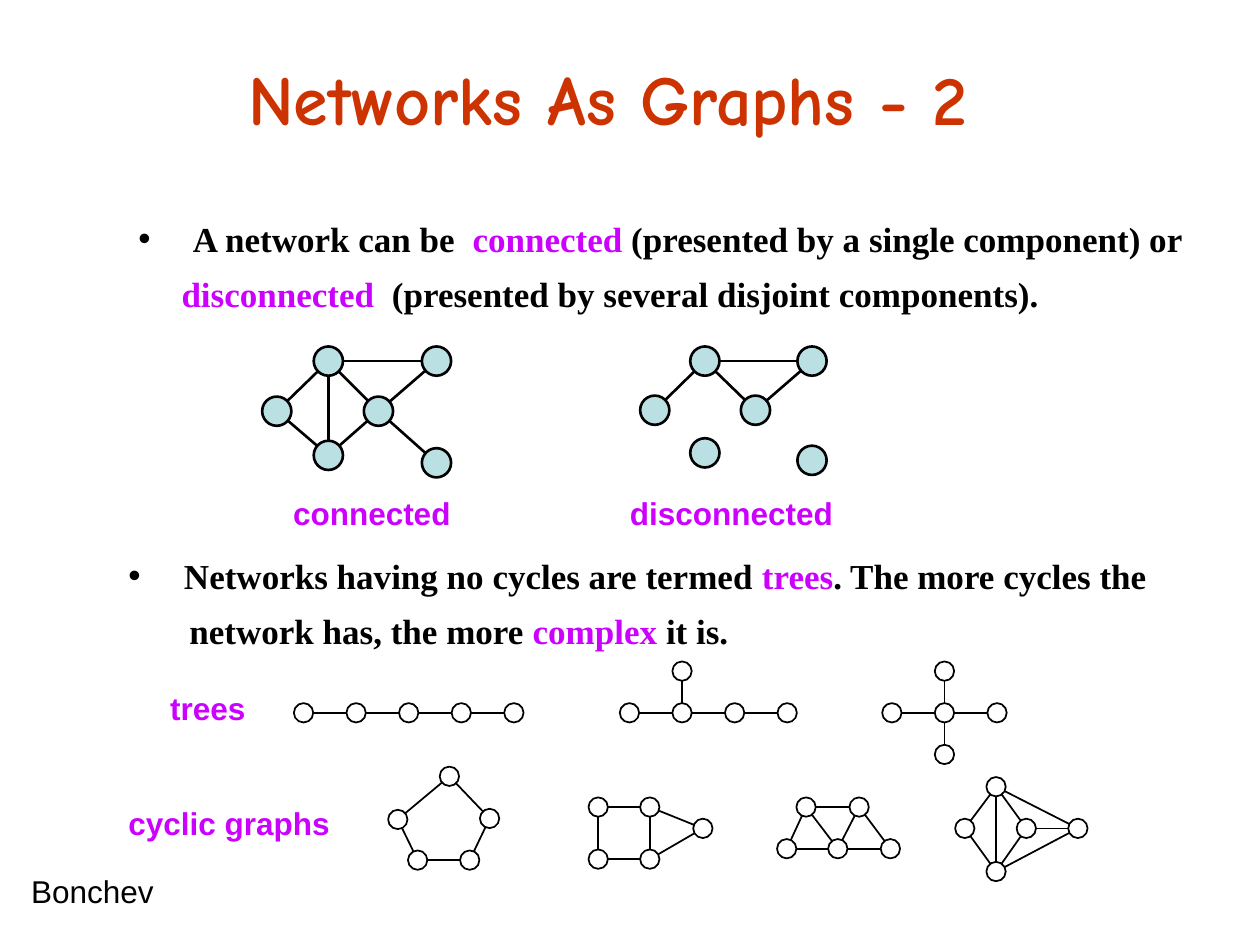
from itertools import pairwise
from math import hypot

from lxml import etree
from pptx import Presentation
from pptx.dml.color import RGBColor
from pptx.enum.shapes import MSO_CONNECTOR, MSO_SHAPE
from pptx.enum.text import MSO_ANCHOR, PP_ALIGN
from pptx.oxml.ns import qn
from pptx.util import Cm, Pt

STRAIGHT = MSO_CONNECTOR.STRAIGHT
ELLIPSE = MSO_SHAPE.OVAL
MIDDLE, TOP = MSO_ANCHOR.MIDDLE, MSO_ANCHOR.TOP
CENTER, LEFT = PP_ALIGN.CENTER, PP_ALIGN.LEFT

BLACK = RGBColor(0x00, 0x00, 0x00)
WHITE = RGBColor(0xFF, 0xFF, 0xFF)
RUST = RGBColor(0xCC, 0x33, 0x00)
VIOLET = RGBColor(0xCC, 0x00, 0xFF)
PALE_TEAL = RGBColor(0xBB, 0xE0, 0xE3)

BIG_NODE = dict(diameter=0.59, fill=PALE_TEAL, weight=1.5)


def add_text(paragraph, text, font="Arial", size=18, color=BLACK, bold=False):
    run = paragraph.add_run()
    run.text = text
    run.font.name = font
    run.font.size = Pt(size)
    run.font.color.rgb = color
    run.font.bold = bold


class GraphSlide:
    def __init__(self, slide):
        self.slide = slide

    def text_frame(self, left, top, width, height, wrap=False, anchor=TOP):
        box = self.slide.shapes.add_textbox(Cm(left), Cm(top), Cm(width), Cm(height))
        box.text_frame.word_wrap = wrap
        box.text_frame.vertical_anchor = anchor
        return box.text_frame

    def label(self, text, left, top, width, height=1.02, align=LEFT, anchor=TOP, **style):
        frame = self.text_frame(left, top, width, height, anchor=anchor)
        frame.paragraphs[0].alignment = align
        add_text(frame.paragraphs[0], text, **style)

    def statement(self, left, top, width, lines, indents):
        frame = self.text_frame(left, top, width, 2.46, wrap=True)
        bulleted, continuation = frame.paragraphs[0], frame.add_paragraph()
        for paragraph, parts, indent in zip((bulleted, continuation), lines, indents):
            paragraph.line_spacing = 1.3
            paragraph._p.get_or_add_pPr().set("marL", str(Cm(indent)))
            for text, color in parts:
                add_text(paragraph, text, font="Times New Roman", size=20,
                         color=color, bold=True)
        properties = bulleted._p.get_or_add_pPr()
        properties.set("indent", str(-Cm(indents[0])))
        etree.SubElement(properties, qn("a:buFont")).set("typeface", "Arial")
        etree.SubElement(properties, qn("a:buChar")).set("char", "•")

    def node(self, x, y, diameter, fill, weight):
        circle = self.slide.shapes.add_shape(
            ELLIPSE, Cm(x - diameter / 2), Cm(y - diameter / 2), Cm(diameter), Cm(diameter))
        circle.shadow.inherit = False
        circle.fill.solid()
        circle.fill.fore_color.rgb = fill
        circle.line.color.rgb = BLACK
        circle.line.width = Pt(weight)

    def edge(self, start, end, diameter, weight):
        (x1, y1), (x2, y2) = start, end
        share = diameter / 2 / hypot(x2 - x1, y2 - y1)
        dx, dy = (x2 - x1) * share, (y2 - y1) * share
        line = self.slide.shapes.add_connector(
            STRAIGHT, Cm(x1 + dx), Cm(y1 + dy), Cm(x2 - dx), Cm(y2 - dy))
        line.line.color.rgb = BLACK
        line.line.width = Pt(weight)
        etree.SubElement(line._element.spPr, qn("a:effectLst"))

    def graph(self, nodes, edges, diameter=0.39, fill=WHITE, weight=1):
        for x, y in nodes.values():
            self.node(x, y, diameter, fill, weight)
        for start, end in edges:
            self.edge(nodes[start], nodes[end], diameter, weight)

    def tree(self, left, length, branches=()):
        step, rise, trunk_y = 1.06, 0.84, 14.37
        nodes = {i: (left + i * step, trunk_y) for i in range(length)}
        edges = list(pairwise(range(length)))
        for side in branches:
            nodes[side] = (left + step, trunk_y + (rise if side == "below" else -rise))
            edges.append((1, side))
        self.graph(nodes, edges)


def main():
    deck = Presentation()
    deck.slide_width, deck.slide_height = Cm(25.4), Cm(19.05)
    page = GraphSlide(deck.slides.add_slide(deck.slide_layouts[6]))

    page.label("Networks As Graphs - 2", 2.39, 0.76, 19.74, 2.41, align=CENTER,
               anchor=MIDDLE, font="Comic Neue", size=40, color=RUST, bold=True)

    page.statement(2.54, 4.01, 21.84, [
        [("A network can be  ", BLACK), ("connected", VIOLET),
         (" (presented by a single component) or", BLACK)],
        [("disconnected  ", VIOLET),
         ("(presented by several disjoint components).", BLACK)],
    ], indents=(1.1, 0.87))
    page.statement(2.34, 10.8, 21.39, [
        [("Networks having no cycles are termed ", BLACK), ("trees", VIOLET),
         (". The more cycles the", BLACK)],
        [("network has, the more ", BLACK), ("complex", VIOLET), (" it is.", BLACK)],
    ], indents=(1.12, 1.23))

    connected = dict(a=(5.58, 8.29), b=(7.63, 8.29), c=(6.62, 7.28),
                     d=(6.62, 9.18), e=(8.8, 9.33), f=(8.8, 7.28))
    page.graph(connected, ["ac", "cf", "ad", "cd", "db", "cb", "bf", "be"], **BIG_NODE)
    disconnected = dict(a=(13.2, 8.27), b=(15.23, 8.27), c=(14.21, 7.28),
                        d=(14.21, 9.13), e=(16.37, 9.28), f=(16.37, 7.28))
    page.graph(disconnected, ["ac", "cf", "cb", "bf"], **BIG_NODE)

    page.tree(6.12, 5)
    page.tree(12.69, 4, ["above"])
    page.tree(17.98, 3, ["above", "below"])

    pentagon = dict(a=(8.42, 17.34), b=(9.47, 17.34), c=(9.87, 16.5),
                    d=(9.06, 15.65), e=(8.02, 16.52))
    page.graph(pentagon, ["ab", "bc", "cd", "de", "ea"])
    house = dict(a=(12.06, 16.27), b=(13.1, 16.27), c=(13.1, 17.32),
                 d=(12.06, 17.32), e=(14.17, 16.7))
    page.graph(house, ["ab", "bc", "cd", "da", "be", "ce"])
    trapezoid = dict(a=(15.86, 17.11), b=(16.89, 17.11), c=(17.95, 17.11),
                     d=(16.25, 16.27), e=(17.32, 16.27))
    page.graph(trapezoid, ["ab", "bc", "de", "ad", "db", "be", "ec"])
    kite = dict(a=(19.45, 16.7), b=(20.69, 16.7), c=(21.73, 16.7),
                d=(20.08, 15.86), e=(20.08, 17.57))
    page.graph(kite, ["bc", "db", "ae", "be", "dc", "ec", "de", "da"])

    for caption, left, top, width in [
        ("connected", 5.66, 9.83, 3.8),
        ("disconnected", 12.45, 9.83, 4.7),
        ("trees", 3.18, 13.77, 2.15),
        ("cyclic graphs", 2.34, 16.08, 4.7),
    ]:
        page.label(caption, left, top, width, color=VIOLET, bold=True)
    page.label("Bonchev", 0.38, 17.45, 3.3)

    deck.save("out.pptx")


if __name__ == "__main__":
    main()
